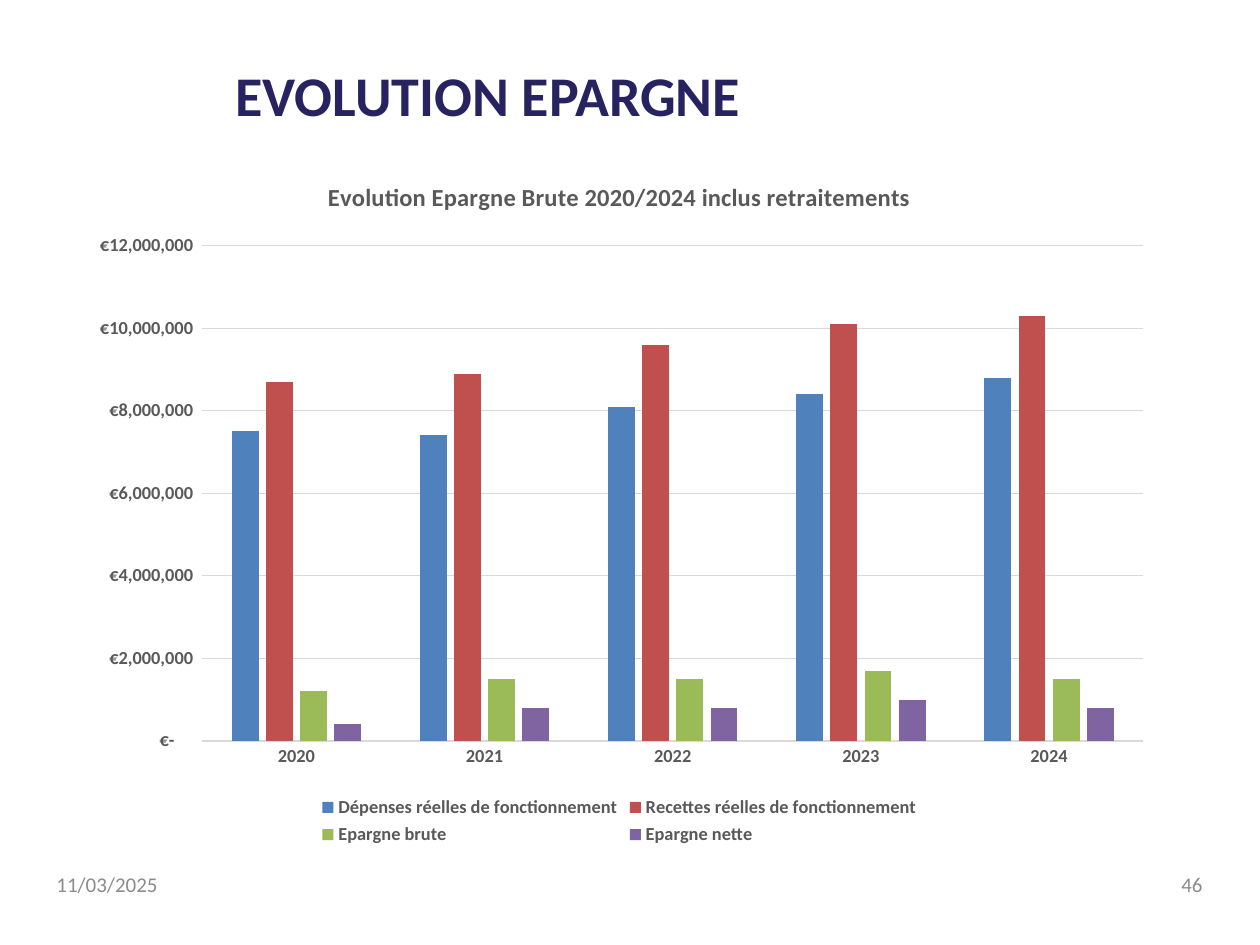
import pptx
import pptx.chart.data
import pptx.dml.color
import pptx.enum.chart
import pptx.enum.text
import pptx.util

PX_PER_INCH = 126
FONT = "Calibri"
COLORS = {
    "title": "272360",
    "footer": "8C8C8C",
    "label": "595959",
    "grid": "D9D9D9",
}
YEARS = ["2020", "2021", "2022", "2023", "2024"]
EURO_FORMAT = (
    r'_("€"* #,##0_);_("€"* \(#,##0\);_("€"* "-"??_);_(@_)'
)
# Name, colour, amounts in euros
SERIES = [
    ("Dépenses réelles de fonctionnement", "4F81BD",
     [7_500_000, 7_400_000, 8_100_000, 8_400_000, 8_800_000]),
    ("Recettes réelles de fonctionnement", "C0504D",
     [8_700_000, 8_900_000, 9_600_000, 10_100_000, 10_300_000]),
    ("Epargne brute", "9BBB59",
     [1_200_000, 1_500_000, 1_500_000, 1_700_000, 1_500_000]),
    ("Epargne nette", "8064A2",
     [400_000, 800_000, 800_000, 1_000_000, 800_000]),
]


def px(n):
    return pptx.util.Emu(round(n * 914400 / PX_PER_INCH))


def rgb(value):
    return pptx.dml.color.RGBColor.from_string(value)


def set_font(font, size, color, bold=False):
    font.name = FONT
    font.size = pptx.util.Pt(size)
    font.bold = bold
    font.color.rgb = rgb(color)


def set_line(line, color):
    line.color.rgb = rgb(color)
    line.width = pptx.util.Pt(0.75)


def write_text(sp, text, size, color, bold=False, align="LEFT"):
    tf = sp.text_frame
    tf.word_wrap = True
    tf.vertical_anchor = pptx.enum.text.MSO_ANCHOR.MIDDLE
    p = tf.paragraphs[0]
    p.text = text
    p.alignment = pptx.enum.text.PP_ALIGN[align]
    set_font(p.font, size, color, bold)


def add_title(s, text):
    sp = s.shapes.title
    sp.left, sp.top, sp.width, sp.height = px(223), px(64), px(1032), px(60)
    write_text(sp, text, 32, COLORS["title"], bold=True)


def add_footer(s, left, text, align):
    sp = s.shapes.add_textbox(px(left), px(859), px(294), px(50))
    write_text(sp, text, 12, COLORS["footer"], align=align)


def format_axis(axis):
    axis.major_tick_mark = pptx.enum.chart.XL_TICK_MARK.NONE
    axis.minor_tick_mark = pptx.enum.chart.XL_TICK_MARK.NONE
    set_font(axis.tick_labels.font, 10.5, COLORS["label"], bold=True)


def add_savings_chart(s):
    data = pptx.chart.data.CategoryChartData(number_format=EURO_FORMAT)
    data.categories = YEARS
    for name, _, values in SERIES:
        data.add_series(name, values)
    chart = s.shapes.add_chart(
        pptx.enum.chart.XL_CHART_TYPE.COLUMN_CLUSTERED,
        px(74), px(155), px(1091), px(696), data).chart
    chart.font.name = FONT
    chart.font.size = pptx.util.Pt(10)

    # Chart title
    chart.has_title = True
    p = chart.chart_title.text_frame.paragraphs[0]
    p.text = "Evolution Epargne Brute 2020/2024 inclus retraitements"
    set_font(p.font, 14, COLORS["label"], bold=True)
    chart.chart_title.include_in_layout = False

    # Legend
    chart.has_legend = True
    legend = chart.legend
    legend.position = pptx.enum.chart.XL_LEGEND_POSITION.BOTTOM
    legend.include_in_layout = False
    set_font(legend.font, 10.5, COLORS["label"], bold=True)

    # Axes
    format_axis(chart.category_axis)
    set_line(chart.category_axis.format.line, COLORS["grid"])
    axis = chart.value_axis
    format_axis(axis)
    axis.format.line.fill.background()
    axis.minimum_scale, axis.maximum_scale = 0, 12_000_000
    axis.major_unit = 2_000_000
    set_line(axis.major_gridlines.format.line, COLORS["grid"])
    axis.tick_labels.number_format = EURO_FORMAT
    axis.tick_labels.number_format_is_linked = False

    # Columns
    plot = chart.plots[0]
    plot.gap_width, plot.overlap = 219, -27
    plot.vary_by_categories = False
    for series, (_, color, _) in zip(plot.series, SERIES):
        series.format.fill.solid()
        series.format.fill.fore_color.rgb = rgb(color)


def main():
    prs = pptx.Presentation()
    prs.slide_width, prs.slide_height = px(1260), px(945)
    s = prs.slides.add_slide(prs.slide_layouts.get_by_name("Title Only"))
    add_title(s, "EVOLUTION EPARGNE")
    add_footer(s, 44, "11/03/2025", "LEFT")
    add_footer(s, 921, "46", "RIGHT")
    add_savings_chart(s)
    prs.save("out.pptx")


if __name__ == "__main__":
    main()
